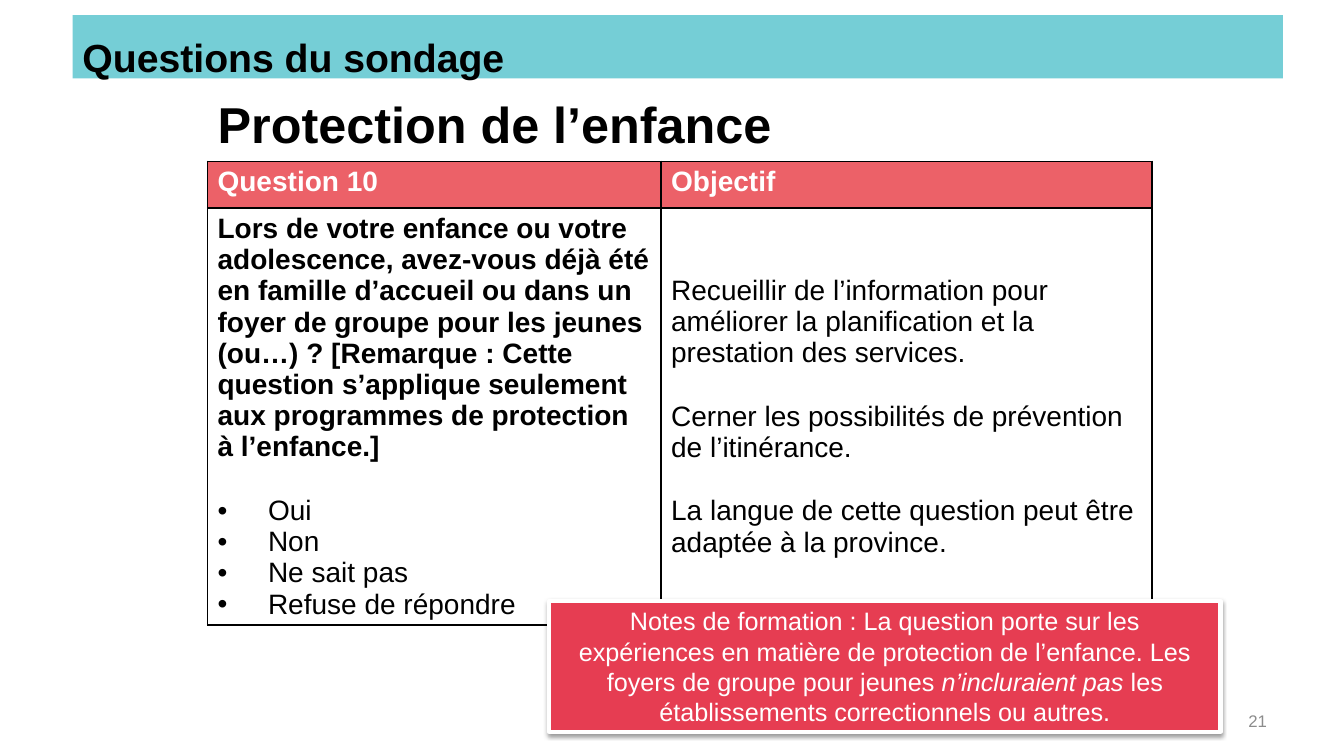
import pptx
import pptx.util
import pptx.dml.color
import pptx.enum.text
import pptx.enum.shapes
import pptx.oxml
import pptx.oxml.ns

Cm = pptx.util.Cm
Pt = pptx.util.Pt
ALIGN = pptx.enum.text.PP_ALIGN
ANCHOR = pptx.enum.text.MSO_ANCHOR
RECT = pptx.enum.shapes.MSO_SHAPE.RECTANGLE

TITLE = "Protection de l’enfance"
BANNER = "Questions du sondage"
HEADS = ["Question 10", "Objectif"]
ASK = ("Lors de votre enfance ou votre adolescence, avez-vous déjà été en famille "
       "d’accueil ou dans un foyer de groupe pour les jeunes (ou…) ? [Remarque : Cette "
       "question s’applique seulement aux programmes de protection à l’enfance.]")
REPLIES = ["Oui", "Non", "Ne sait pas", "Refuse de répondre"]
GOALS = [
    "Recueillir de l’information pour améliorer la planification et la prestation des services.",
    "Cerner les possibilités de prévention de l’itinérance.",
    "La langue de cette question peut être adaptée à la province.",
]
NOTE = [
    ("Notes de formation\u00a0: La question porte sur les expériences en matière de "
     "protection de l’enfance. Les foyers de groupe pour jeunes ", False),
    ("n’incluraient pas", True),
    (" les établissements correctionnels ou autres.", False),
]
PAGE = "21"

COLORS = {"black": "000000", "white": "FFFFFF", "teal": "75CED6",
          "coral": "EC6168", "red": "E63D52", "gray": "8C8C8C"}
FONT = "Arial"
GAP = 23
COLS = [11.43, 12.37]
ROWS = [1.18, 10.48]


def color(name):
    return pptx.dml.color.RGBColor.from_string(COLORS[name])


def xml(text):
    return pptx.oxml.parse_xml(text.replace(">", " " + pptx.oxml.ns.nsdecls("a") + ">", 1))


def write(frame, text, size=20, tint="black", bold=False, align=ALIGN.LEFT,
          before=0, bullet=False, more=False):
    para = frame.add_paragraph() if more else frame.paragraphs[0]
    para.alignment = align
    if bullet:
        props = para._p.get_or_add_pPr()
        props.set("marL", str(Cm(1.27)))
        props.set("indent", str(-Cm(1.27)))
        props.append(xml('<a:buFont typeface="Arial">\n</a:buFont>'))
        props.append(xml('<a:buChar char="•">\n</a:buChar>'))
    if before:
        para.space_before = Pt(before)
    for words, slant in [(text, False)] if isinstance(text, str) else text:
        run = para.add_run()
        run.text = words
        font = run.font
        font.name, font.size, font.bold, font.italic = FONT, Pt(size), bold, slant
        font.color.rgb = color(tint)
    return para


def block(slide, fill, left, top, width, height):
    shape = slide.shapes.add_shape(RECT, Cm(left), Cm(top), Cm(width), Cm(height))
    shape.shadow.inherit = False
    shape.fill.solid()
    shape.fill.fore_color.rgb = color(fill)
    shape.line.fill.background()
    shape.text_frame.word_wrap = True
    return shape


def border(cell):
    props = cell._tc.get_or_add_tcPr()
    for place, side in enumerate(["lnL", "lnR", "lnT", "lnB"]):
        props.insert(place, xml(
            f'<a:{side} w="{Pt(1)}"><a:solidFill><a:srgbClr val="{COLORS["black"]}"/>'
            f'</a:solidFill></a:{side}>'))


def add_title(slide):
    title = slide.shapes.title
    title.left, title.top, title.width, title.height = Cm(5.23), Cm(2.13), Cm(22.56), Cm(1.96)
    frame = title.text_frame
    frame.auto_size = pptx.enum.text.MSO_AUTO_SIZE.NONE
    frame.vertical_anchor = ANCHOR.MIDDLE
    write(frame, TITLE, size=36, bold=True)


def add_banner(slide):
    frame = block(slide, "teal", 1.83, 0.38, 30.5, 1.6).text_frame
    frame.vertical_anchor = ANCHOR.TOP
    write(frame, BANNER, size=28, bold=True).line_spacing = Pt(43.2)


def add_grid(slide):
    table = slide.shapes.add_table(2, 2, Cm(5.23), Cm(4.06), Cm(sum(COLS)), Cm(sum(ROWS))).table
    table.first_row = table.horz_banding = False
    for col, width in zip(table.columns, COLS):
        col.width = Cm(width)
    for row, height in zip(table.rows, ROWS):
        row.height = Cm(height)
    for cell in table.iter_cells():
        cell.fill.background()
        border(cell)
    for col, head in enumerate(HEADS):
        cell = table.cell(0, col)
        cell.fill.solid()
        cell.fill.fore_color.rgb = color("coral")
        write(cell.text_frame, head, tint="white", bold=True)
    left, right = table.cell(1, 0), table.cell(1, 1)
    write(left.text_frame, ASK, bold=True)
    for i, reply in enumerate(REPLIES):
        write(left.text_frame, reply, bullet=True, more=True, before=0 if i else GAP)
    right.vertical_anchor = ANCHOR.MIDDLE
    for i, goal in enumerate(GOALS):
        write(right.text_frame, goal, more=i > 0, before=GAP if i else 0)


def add_note(slide):
    note = block(slide, "red", 13.84, 15.14, 16.92, 3.3)
    note.line.color.rgb = color("white")
    note.line.width = Pt(3)
    glow = note._element.spPr.find(pptx.oxml.ns.qn("a:effectLst"))
    glow.append(xml(
        f'<a:outerShdw blurRad="{Pt(3.1)}" dist="{Pt(1.6)}" dir="5400000" rotWithShape="0">'
        f'<a:srgbClr val="{COLORS["black"]}"><a:alpha val="38000"/></a:srgbClr></a:outerShdw>'))
    note.text_frame.vertical_anchor = ANCHOR.MIDDLE
    write(note.text_frame, NOTE, size=18, tint="white", align=ALIGN.CENTER)


def add_page(slide):
    frame = slide.shapes.add_textbox(Cm(24.28), Cm(17.65), Cm(7.9), Cm(1.02)).text_frame
    frame.word_wrap = True
    frame.vertical_anchor = ANCHOR.MIDDLE
    write(frame, PAGE, size=12, tint="gray", align=ALIGN.RIGHT)


def main():
    deck = pptx.Presentation()
    deck.slide_width, deck.slide_height = Cm(33.87), Cm(19.05)
    slide = deck.slides.add_slide(deck.slide_layouts[5])
    for add in (add_title, add_banner, add_grid, add_note, add_page):
        add(slide)
    deck.save("out.pptx")


if __name__ == "__main__":
    main()
